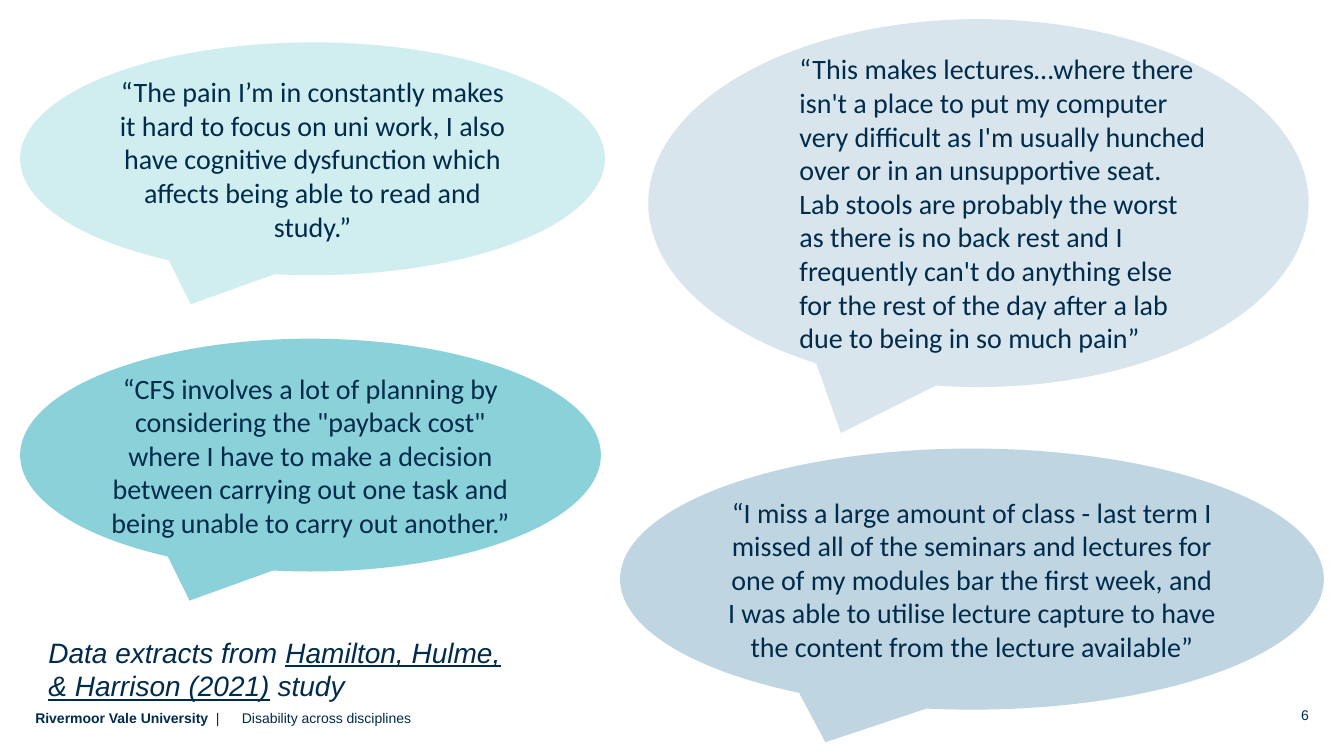
from lxml.etree import SubElement
from pptx import Presentation
from pptx.dml.color import RGBColor as RGB
from pptx.enum.shapes import MSO_SHAPE as Shape
from pptx.enum.text import MSO_ANCHOR as Anchor, PP_ALIGN as Align
from pptx.oxml.ns import qn
from pptx.util import Inches, Pt

COLORS = {"navy": "002B4B", "steel": "AAC7D8", "mist": "CCDDE8",
          "aqua": "C1E7EB", "teal": "63C2CD"}
OPACITY = 75

# box (left, top, width, height), fill, left indent, quote
QUOTES = [
    ((6.15, 4.45, 6.98, 2.59), "steel", 0,
     "“I miss a large amount of class - last term I missed all of the seminars "
     "and lectures for one of my modules bar the first week, and I was able to "
     "utilise lecture capture to have the content from the lecture available”"),
    ((6.43, 0.19, 6.55, 3.65), "mist", 0.5,
     "“This makes lectures…where there isn't a place to put my computer very "
     "difficult as I'm usually hunched over or in an unsupportive seat. Lab "
     "stools are probably the worst as there is no back rest and I frequently "
     "can't do anything else for the rest of the day after a lab due to being "
     "in so much pain”"),
    ((0.2, 0.42, 5.8, 2.31), "aqua", 0,
     "“The pain I’m in constantly makes it hard to focus on uni work, I also "
     "have cognitive dysfunction which affects being able to read and study.”"),
    ((0.2, 3.36, 5.76, 2.31), "teal", 0,
     "“CFS involves a lot of planning by considering the \"payback cost\" where "
     "I have to make a decision between carrying out one task and being unable "
     "to carry out another.”"),
]

# box, size, alignment, runs of (text, styles)
LABELS = [
    ((0.35, 7.04, 2.01, 0.24), 10, Align.LEFT,
     [("Rivermoor Vale University ", {"bold": True}), (" |", {})]),
    ((12, 7.01, 0.98, 0.28), 10, Align.RIGHT, [("6", {})]),
    ((2.4, 7.04, 3.86, 0.24), 10, Align.LEFT,
     [("Disability across disciplines", {})]),
    ((0.48, 6.3, 4.56, 0.59), 20, Align.LEFT,
     [("Data extracts from ", {"italic": True}),
      ("Hamilton, Hulme, & Harrison (2021)", {"italic": True, "underline": True}),
      (" study", {"italic": True})]),
]


def color(name):
    return RGB.from_string(COLORS[name])


def set_frame(shape, inset, anchor):
    frame = shape.text_frame
    frame.word_wrap = True
    frame.vertical_anchor = anchor
    frame.margin_left = frame.margin_right = Inches(inset)
    frame.margin_top = frame.margin_bottom = Inches(inset)
    return frame.paragraphs[0]


def set_font(para, name, size):
    para.font.name = name
    para.font.size = Pt(size)
    para.font.color.rgb = color("navy")


def add_quote(slide, box, fill, indent, text):
    bubble = slide.shapes.add_shape(Shape.OVAL_CALLOUT, *map(Inches, box))
    bubble.shadow.inherit = False
    bubble.line.fill.background()
    bubble.fill.solid()
    bubble.fill.fore_color.rgb = color(fill)
    tint = bubble.fill._xPr.find(".//" + qn("a:srgbClr"))
    SubElement(tint, qn("a:alpha"), val=str(OPACITY * 1000))
    para = set_frame(bubble, 0.04, Anchor.MIDDLE)
    para.text = text
    para.alignment = Align.LEFT if indent else Align.CENTER
    if indent:
        para._p.get_or_add_pPr().set("marL", str(Inches(indent)))
    set_font(para, "Calibri", 20)


def add_label(slide, box, size, align, runs):
    label = slide.shapes.add_textbox(*map(Inches, box))
    para = set_frame(label, 0, Anchor.TOP)
    para.alignment = align
    set_font(para, "Arial", size)
    for text, styles in runs:
        run = para.add_run()
        run.text = text
        for key, value in styles.items():
            setattr(run.font, key, value)


def main():
    deck = Presentation()
    deck.slide_width, deck.slide_height = Inches(13.33), Inches(7.5)
    slide = deck.slides.add_slide(deck.slide_layouts[6])
    for quote in QUOTES:
        add_quote(slide, *quote)
    for label in LABELS:
        add_label(slide, *label)
    deck.save("out.pptx")


if __name__ == "__main__":
    main()
